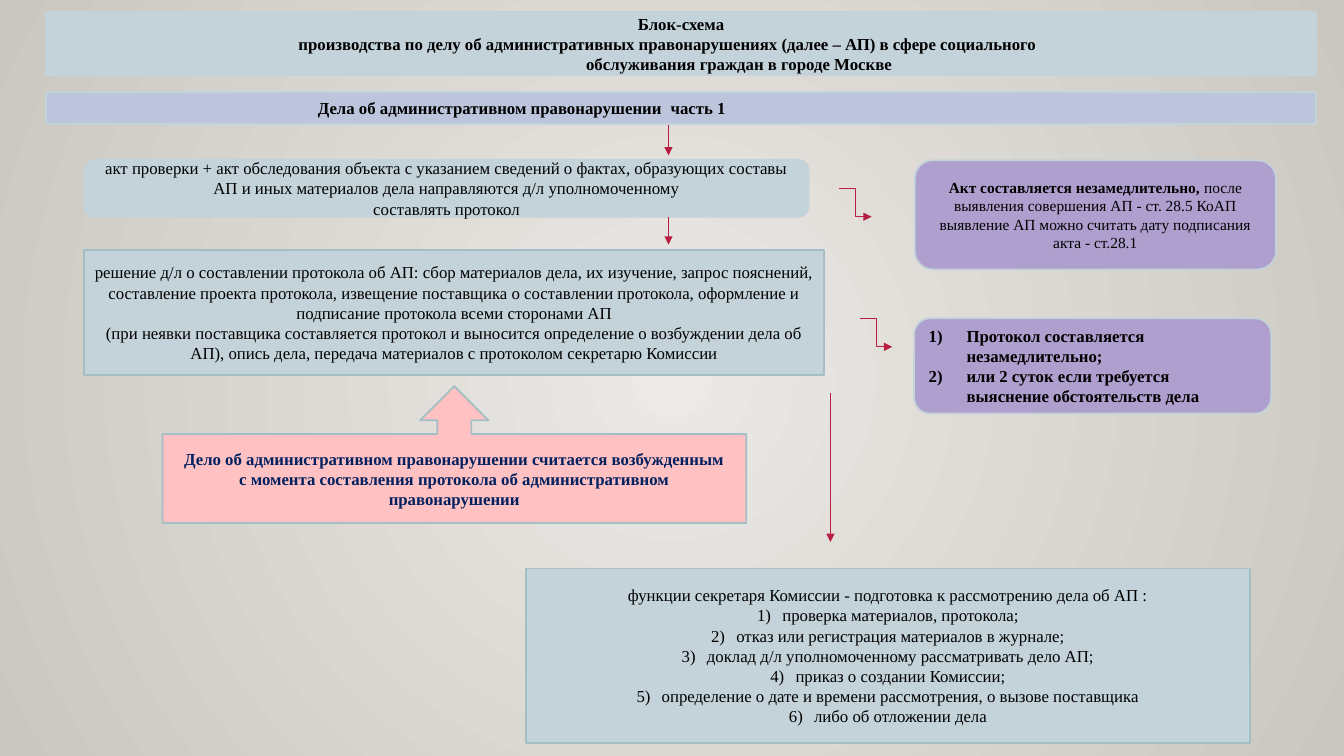
from dataclasses import dataclass

from lxml.etree import SubElement
from pptx import Presentation
from pptx.dml.color import RGBColor
from pptx.enum.shapes import MSO_CONNECTOR as Link, MSO_SHAPE as Preset
from pptx.enum.text import MSO_ANCHOR, MSO_AUTO_SIZE, PP_ALIGN as Align
from pptx.oxml.ns import qn
from pptx.util import Pt


@dataclass(frozen=True)
class Theme:
    font: str = "Times New Roman"
    body: float = 12
    small: float = 11
    outline: float = 1.25
    arrow_width: float = 0.75
    black: str = "000000"
    navy: str = "002060"
    step: str = "C3D3D9"
    edge: str = "A4BEC6"
    band: str = "BCC5DC"
    deadline: str = "AF9FCF"
    pink: str = "FFC1C1"
    arrow: str = "B71E42"
    glow: str = "ECEAE7"
    rim: str = "CAC7C1"


theme = Theme()
rgb = RGBColor.from_string


def style(box, fill, line):
    box.shadow.inherit = False
    box.fill.solid()
    box.fill.fore_color.rgb = rgb(fill)
    box.line.color.rgb = rgb(line)
    box.line.width = Pt(theme.outline)


def write(box, texts, size=theme.body, color=theme.black, bold=False,
          align=Align.CENTER, numbered_from=None, indent=0):
    """Fill box with paragraphs; a tuple is a bold lead and a plain rest."""
    frame = box.text_frame
    frame.word_wrap = True
    frame.auto_size = MSO_AUTO_SIZE.NONE
    frame.vertical_anchor = MSO_ANCHOR.MIDDLE
    for index, text in enumerate(texts):
        para = frame.paragraphs[0] if index == 0 else frame.add_paragraph()
        para.alignment = align
        para.line_spacing = 1.0
        para.space_before = Pt(0)
        numbered = numbered_from is not None and index >= numbered_from
        props = para._p.get_or_add_pPr()
        props.set("marL", str(Pt(indent) if numbered else 0))
        props.set("indent", str(-Pt(indent) if numbered else 0))
        if numbered:
            SubElement(props, qn("a:buFont"), typeface="+mj-lt")
            SubElement(props, qn("a:buAutoNum"), type="arabicParenR")
        else:
            SubElement(props, qn("a:buNone"))
        para.font.name = theme.font
        para.font.size = Pt(size)
        para.font.bold = bold
        para.font.color.rgb = rgb(color)
        if isinstance(text, tuple):
            for part, is_bold in zip(text, (True, False)):
                span = para.add_run()
                span.text = part
                span.font.bold = is_bold
        else:
            para.add_run().text = text


deck = Presentation()
deck.slide_width, deck.slide_height = Pt(960), Pt(540)
page = deck.slides.add_slide(deck.slide_layouts[1])

# Background: radial glow from the centre
backdrop = page.background.fill
backdrop.gradient()
for stop, color in zip(backdrop.gradient_stops, (theme.glow, theme.rim)):
    stop.color.rgb = rgb(color)
gradient = page._element.find(".//" + qn("a:gradFill"))
gradient.remove(gradient.find(qn("a:lin")))
circle = SubElement(gradient, qn("a:path"), path="circle")
SubElement(circle, qn("a:fillToRect"), l="50000", t="50000", r="50000", b="50000")

# Heading: the second line sits left of centre, the third right of it
heading = page.shapes.title
heading.left, heading.top, heading.width, heading.height = Pt(33), Pt(8.5), Pt(907), Pt(45.5)
style(heading, theme.step, theme.step)
write(heading, [
    "Блок-схема",
    "производства по делу об административных правонарушениях (далее – АП) в сфере социального",
    "обслуживания граждан в городе Москве",
], bold=True)
heading.text_frame.margin_right = Pt(26.2)
for para, shift in zip(heading.text_frame.paragraphs, (19, 0, 102)):
    para._p.pPr.set("marL", str(Pt(shift)))

# Secretary's duties
duties = page.placeholders[1]
duties.left, duties.top, duties.width, duties.height = Pt(375.8), Pt(406), Pt(517), Pt(124.5)
style(duties, theme.step, theme.edge)
write(duties, [
    "функции секретаря Комиссии - подготовка к рассмотрению дела об АП :",
    "проверка материалов, протокола;",
    "отказ или регистрация материалов в журнале;",
    "доклад д/л уполномоченному рассматривать дело АП;",
    "приказ о создании Комиссии;",
    "определение о дате и времени рассмотрения, о вызове поставщика",
    "либо об отложении дела",
], numbered_from=1, indent=18)

# Band with the part number at a tab stop
band = page.shapes.add_shape(Preset.RECTANGLE, Pt(33), Pt(65.7), Pt(907), Pt(23))
style(band, theme.band, theme.step)
band.text_frame.margin_left = Pt(194)
band_props = band.text_frame.paragraphs[0]._p.get_or_add_pPr()
tabs = SubElement(band_props, qn("a:tabLst"))
SubElement(tabs, qn("a:tab"), pos=str(Pt(478.6)), algn="l")
write(band, ["Дела об административном правонарушении\tчасть 1"], bold=True, align=Align.LEFT)
band_props.insert(list(band_props).index(band_props.find(qn("a:buNone"))) + 1, tabs)

# Steps and deadlines: preset, left, top, width, height, fill, line, texts, text options
boxes = [
    (Preset.ROUNDED_RECTANGLE, 60.5, 114.2, 517, 40.6, theme.step, theme.step, [
        "акт проверки + акт обследования объекта с указанием сведений о фактах, образующих составы "
        "АП и иных материалов дела направляются д/л уполномоченному",
        "составлять протокол",
    ], {}),
    (Preset.ROUNDED_RECTANGLE, 653.4, 114.5, 258, 78, theme.deadline, theme.step, [
        ("Акт составляется незамедлительно, ", "после выявления совершения АП - ст. 28.5 КоАП"),
        "выявление АП можно считать дату подписания акта - ст.28.1",
    ], {"size": theme.small}),
    (Preset.RECTANGLE, 60.3, 178.6, 528.5, 89.3, theme.step, theme.edge, [
        "решение д/л о составлении протокола об АП: сбор материалов дела, их изучение, запрос "
        "пояснений, составление проекта протокола, извещение поставщика о составлении протокола, "
        "оформление и подписание протокола всеми сторонами АП",
        "(при неявки поставщика составляется протокол и выносится определение о возбуждении дела "
        "об АП), опись дела, передача материалов с протоколом секретарю Комиссии",
    ], {}),
    (Preset.ROUNDED_RECTANGLE, 653, 227.4, 255, 68, theme.deadline, theme.step, [
        "Протокол составляется незамедлительно;",
        "или 2 суток если требуется выяснение обстоятельств дела",
    ], {"bold": True, "align": Align.LEFT, "numbered_from": 0, "indent": 27}),
    (Preset.UP_ARROW_CALLOUT, 116, 275.8, 417, 97.8, theme.pink, theme.edge, [
        "Дело об административном правонарушении считается возбужденным",
        "с момента составления протокола об административном правонарушении",
    ], {"bold": True, "color": theme.navy}),
]
for preset, left, top, width, height, fill, line, texts, options in boxes:
    box = page.shapes.add_shape(preset, Pt(left), Pt(top), Pt(width), Pt(height))
    style(box, fill, line)
    write(box, texts, **options)

# Arrows between the steps
arrows = [
    (Link.STRAIGHT, 477.5, 89, 477.5, 111),
    (Link.STRAIGHT, 477.5, 154.8, 477.5, 174.8),
    (Link.STRAIGHT, 593.2, 280.8, 593.2, 387.2),
    (Link.ELBOW, 599.4, 134.6, 622.6, 154.8),
    (Link.ELBOW, 614.2, 227.5, 637.4, 247.7),
]
for kind, *ends in arrows:
    arrow = page.shapes.add_connector(kind, *map(Pt, ends))
    arrow.line.color.rgb = rgb(theme.arrow)
    arrow.line.width = Pt(theme.arrow_width)
    SubElement(arrow.line._get_or_add_ln(), qn("a:tailEnd"), type="triangle")
    SubElement(arrow._element.spPr, qn("a:effectLst"))

deck.save("out.pptx")
